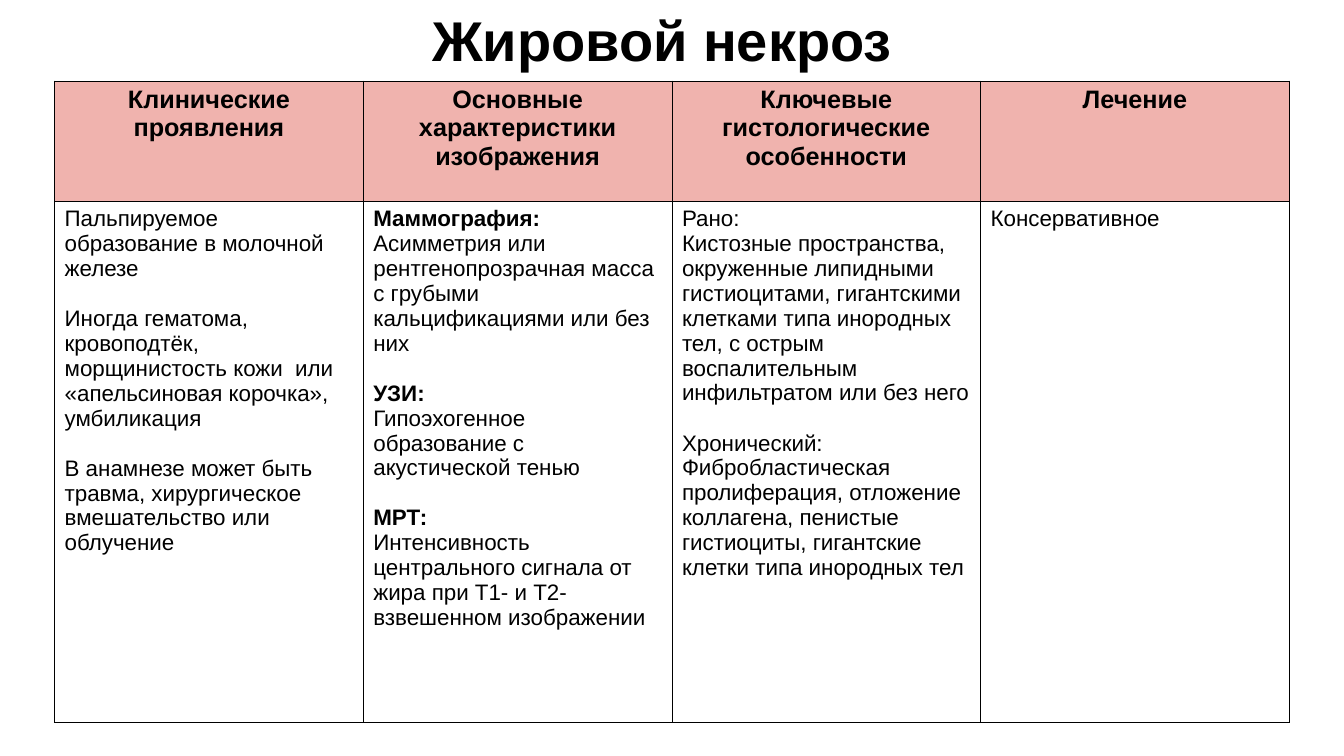
from dataclasses import dataclass

from lxml.etree import SubElement
from pptx import Presentation
from pptx.dml.color import RGBColor
from pptx.enum.text import MSO_ANCHOR as Anchor, MSO_AUTO_SIZE as AutoSize, PP_ALIGN as Align
from pptx.oxml.ns import qn
from pptx.table import _Cell as Cell
from pptx.text.text import TextFrame
from pptx.util import Emu, Pt

BLACK = RGBColor(0x00, 0x00, 0x00)
WHITE = RGBColor(0xFF, 0xFF, 0xFF)
PINK = RGBColor(0xF0, 0xB3, 0xAE)
FONT = "Arial"
EMU_PER_PX = 9525
COLUMN_WIDTH = 294
HEADING_HEIGHT = 115
DETAILS_HEIGHT = 496
BLOCK_GAP = 18


@dataclass(frozen=True)
class Line:
    text: str
    bold: bool = False
    gap: int = 0


@dataclass(frozen=True)
class Aspect:
    heading: str
    details: tuple[Line, ...]


ASPECTS = (
    Aspect("Клинические проявления", (
        Line("Пальпируемое образование в молочной железе"),
        Line("Иногда гематома, кровоподтёк, морщинистость кожи  или "
             "«апельсиновая корочка», умбиликация", gap=BLOCK_GAP),
        Line("В анамнезе может быть травма, хирургическое вмешательство "
             "или облучение", gap=BLOCK_GAP),
    )),
    Aspect("Основные характеристики изображения", (
        Line("Маммография:", bold=True),
        Line("Асимметрия или рентгенопрозрачная масса с грубыми "
             "кальцификациями или без них"),
        Line("УЗИ:", bold=True, gap=BLOCK_GAP),
        Line("Гипоэхогенное образование с акустической тенью"),
        Line("МРТ:", bold=True, gap=BLOCK_GAP),
        Line("Интенсивность центрального сигнала от жира при Т1- и "
             "Т2-взвешенном изображении"),
    )),
    Aspect("Ключевые гистологические особенности", (
        Line("Рано:"),
        Line("Кистозные пространства, окруженные липидными гистиоцитами, "
             "гигантскими клетками типа инородных тел, с острым "
             "воспалительным инфильтратом или без него"),
        Line("Хронический:", gap=BLOCK_GAP),
        Line("Фибробластическая пролиферация, отложение коллагена, пенистые "
             "гистиоциты, гигантские клетки типа инородных тел"),
    )),
    Aspect("Лечение", (Line("Консервативное"),)),
)


def px(length: int) -> Emu:
    return Emu(length * EMU_PER_PX)


def write_text(frame: TextFrame, *lines: Line, size: int, align: Align = Align.LEFT) -> None:
    for index, line in enumerate(lines):
        paragraph = frame.add_paragraph() if index else frame.paragraphs[0]
        paragraph.alignment = align
        paragraph.space_before = Pt(line.gap)
        run = paragraph.add_run()
        run.text = line.text
        run.font.name = FONT
        run.font.size = Pt(size)
        run.font.bold = line.bold
        run.font.color.rgb = BLACK


def style_cell(cell: Cell, fill: RGBColor) -> None:
    properties = cell._tc.get_or_add_tcPr()
    for side in ("lnL", "lnR", "lnT", "lnB"):
        border = SubElement(properties, qn(f"a:{side}"), w=str(Pt(0.5)))
        paint = SubElement(border, qn("a:solidFill"))
        SubElement(paint, qn("a:srgbClr"), val=str(BLACK))
    cell.fill.solid()
    cell.fill.fore_color.rgb = fill


def main() -> None:
    deck = Presentation()
    deck.slide_width, deck.slide_height = px(1280), px(720)
    slide = deck.slides.add_slide(deck.slide_layouts[5])

    title = slide.shapes.title
    title.left, title.top, title.width, title.height = px(402), px(0), px(476), px(104)
    title.text_frame.word_wrap = False
    title.text_frame.auto_size = AutoSize.NONE
    title.text_frame.vertical_anchor = Anchor.TOP
    write_text(title.text_frame, Line("Жировой некроз", bold=True), size=40)

    overview = slide.shapes.add_table(
        2, len(ASPECTS), px(52), px(77),
        px(COLUMN_WIDTH * len(ASPECTS)), px(HEADING_HEIGHT + DETAILS_HEIGHT),
    ).table
    overview.first_row = overview.horz_banding = False
    overview.rows[0].height = px(HEADING_HEIGHT)
    overview.rows[1].height = px(DETAILS_HEIGHT)

    for index, aspect in enumerate(ASPECTS):
        overview.columns[index].width = px(COLUMN_WIDTH)
        heading, details = overview.cell(0, index), overview.cell(1, index)
        style_cell(heading, PINK)
        style_cell(details, WHITE)
        write_text(heading.text_frame, Line(aspect.heading, bold=True), size=18, align=Align.CENTER)
        write_text(details.text_frame, *aspect.details, size=16)

    deck.save("out.pptx")


if __name__ == "__main__":
    main()
